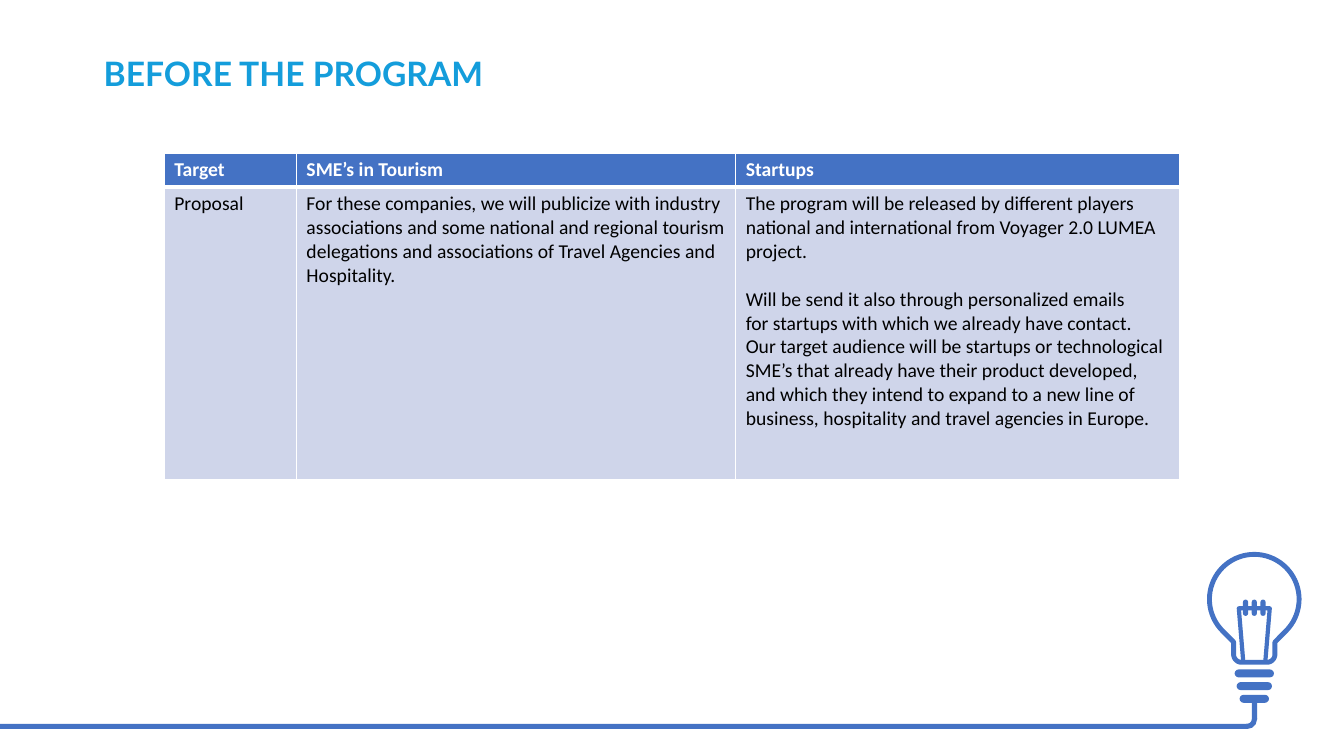
import math

import lxml.etree
import pptx
import pptx.dml.color
import pptx.enum.shapes
import pptx.enum.text
import pptx.oxml.ns
import pptx.util

Cm = pptx.util.Cm
Pt = pptx.util.Pt
SHAPE = pptx.enum.shapes.MSO_SHAPE
BLUE, PALE, WHITE, BLACK = "4472C4", "CFD5EA", "FFFFFF", "000000"
MID = 31.61  # centre line of the bulb, in cm

HEADS = ["Target", "SME’s in Tourism", "Startups"]
CELLS = [
    ["Proposal"],
    ["For these companies, we will publicize with industry associations and some "
     "national and regional tourism delegations and associations of Travel Agencies "
     "and Hospitality."],
    ["The program will be released by different players\v"
     "national and international from Voyager 2.0 LUMEA project.",
     "Will be send it also through personalized emails\v"
     "for startups with which we already have contact.",
     "Our target audience will be startups or technological SME’s that already have "
     "their product developed, and which they intend to expand to a new line of "
     "business, hospitality and travel agencies in Europe."],
]


def color(code):
    return pptx.dml.color.RGBColor.from_string(code)


def style(para, font, size, code, bold):
    para.alignment = pptx.enum.text.PP_ALIGN.LEFT
    for run in para.runs:
        run.font.name = font
        run.font.size = Pt(size)
        run.font.bold = bold
        run.font.color.rgb = color(code)


def add_title(slide, text):
    title = slide.shapes.title
    title.left, title.top, title.width, title.height = Cm(2.36), Cm(1.2), Cm(20.85), Cm(1.27)
    frame = title.text_frame
    frame.text = text
    frame.word_wrap = True
    frame.auto_size = pptx.enum.text.MSO_AUTO_SIZE.NONE
    frame.vertical_anchor = pptx.enum.text.MSO_ANCHOR.TOP
    style(frame.paragraphs[0], "Lato", 24, "149DDB", True)


def add_edges(cell, widths):
    props = cell._tc.get_or_add_tcPr()
    for side, width in zip("LRTB", widths):
        edge = lxml.etree.SubElement(props, pptx.oxml.ns.qn("a:ln" + side), w=str(Pt(width)))
        fill = lxml.etree.SubElement(edge, pptx.oxml.ns.qn("a:solidFill"))
        lxml.etree.SubElement(fill, pptx.oxml.ns.qn("a:srgbClr"), val=WHITE)


def fill_cell(cell, lines, back, code, bold, widths):
    add_edges(cell, widths)
    cell.fill.solid()
    cell.fill.fore_color.rgb = color(back)
    frame = cell.text_frame
    for i, line in enumerate(lines):
        para = frame.add_paragraph() if i else frame.paragraphs[0]
        para.text = line
        style(para, "Calibri", 14, code, bold)


def add_grid(slide):
    cols, rows = [3.33, 11.07, 11.2], [0.85, 7.37]
    grid = slide.shapes.add_table(2, 3, Cm(4.14), Cm(3.86), Cm(sum(cols)), Cm(sum(rows))).table
    for row, height in zip(grid.rows, rows):
        row.height = Cm(height)
    for i, width in enumerate(cols):
        grid.columns[i].width = Cm(width)
        fill_cell(grid.cell(0, i), [HEADS[i]], BLUE, WHITE, True, (1, 1, 1, 3))
        fill_cell(grid.cell(1, i), CELLS[i], PALE, BLACK, False, (1, 1, 3, 1))
    # One line of space between the two announcements
    grid.cell(1, 2).text_frame.paragraphs[0].space_after = Pt(17)


def add_block(slide, kind, left, top, width, height):
    block = slide.shapes.add_shape(kind, Cm(left), Cm(top), Cm(width), Cm(height))
    block.shadow.inherit = False
    block.fill.solid()
    block.fill.fore_color.rgb = color(BLUE)
    block.line.fill.background()
    return block


def add_pill(slide, mid, top, width, height):
    pill = add_block(slide, SHAPE.ROUNDED_RECTANGLE, mid - width / 2, top, width, height)
    pill.adjustments[0] = 0.5


def add_path(slide, points, weight, back=None):
    spots = [(Cm(x), Cm(y)) for x, y in points]
    maker = slide.shapes.build_freeform(*spots[0])
    maker.add_line_segments(spots[1:], close=back is not None)
    path = maker.convert_to_shape()
    path.shadow.inherit = False
    path.line.color.rgb = color(BLUE)
    path.line.width = Pt(weight)
    if back:
        path.fill.solid()
        path.fill.fore_color.rgb = color(back)
    else:
        path.fill.background()


def arc(x, y, radius, start, end):
    """Points along a circle, clockwise from start to end in degrees."""
    count = math.ceil((end - start) / 5)
    turns = [math.radians(start + (end - start) * i / count) for i in range(count + 1)]
    return [(x + radius * math.cos(t), y + radius * math.sin(t)) for t in turns]


def add_bulb(slide):
    # Glass and neck
    neck, bend = 0.52, 0.2
    glass = arc(MID, 15.1, 1.13, 135, 405)
    glass += [(MID + neck, 16.18)]
    glass += arc(MID + neck - bend, 16.49, bend, 0, 90)
    glass += arc(MID - neck + bend, 16.49, bend, 90, 180)
    glass += [(MID - neck, 16.18)]
    add_path(slide, glass, 3.5, WHITE)

    # Filament
    wire = [(-0.28, 16.65), (-0.39, 15.33), (0.39, 15.33), (0.28, 16.65)]
    add_path(slide, [(MID + x, y) for x, y in wire], 3)
    for i in (-1, 0, 1):
        add_pill(slide, MID + 0.22 * i, 15.11, 0.13, 0.41)

    # Screw base
    for i, width in enumerate((0.99, 0.89, 0.74)):
        add_pill(slide, MID, 16.87 + 0.32 * i, width, 0.2)

    # Cable
    add_block(slide, SHAPE.RECTANGLE, 0, 18.24, 31.42, 0.13)
    add_block(slide, SHAPE.RECTANGLE, 31.55, 17.7, 0.13, 0.43)
    turn = add_block(slide, SHAPE.BLOCK_ARC, 31.19, 17.88, 0.49, 0.49)
    for i, value in enumerate((213.39, 60.92, 0.27)):
        turn.adjustments[i] = value


def main():
    deck = pptx.Presentation()
    deck.slide_width, deck.slide_height = Cm(33.87), Cm(19.05)
    slide = deck.slides.add_slide(deck.slide_layouts[5])
    add_bulb(slide)
    add_grid(slide)
    add_title(slide, "BEFORE THE PROGRAM")
    deck.save("out.pptx")


if __name__ == "__main__":
    main()
